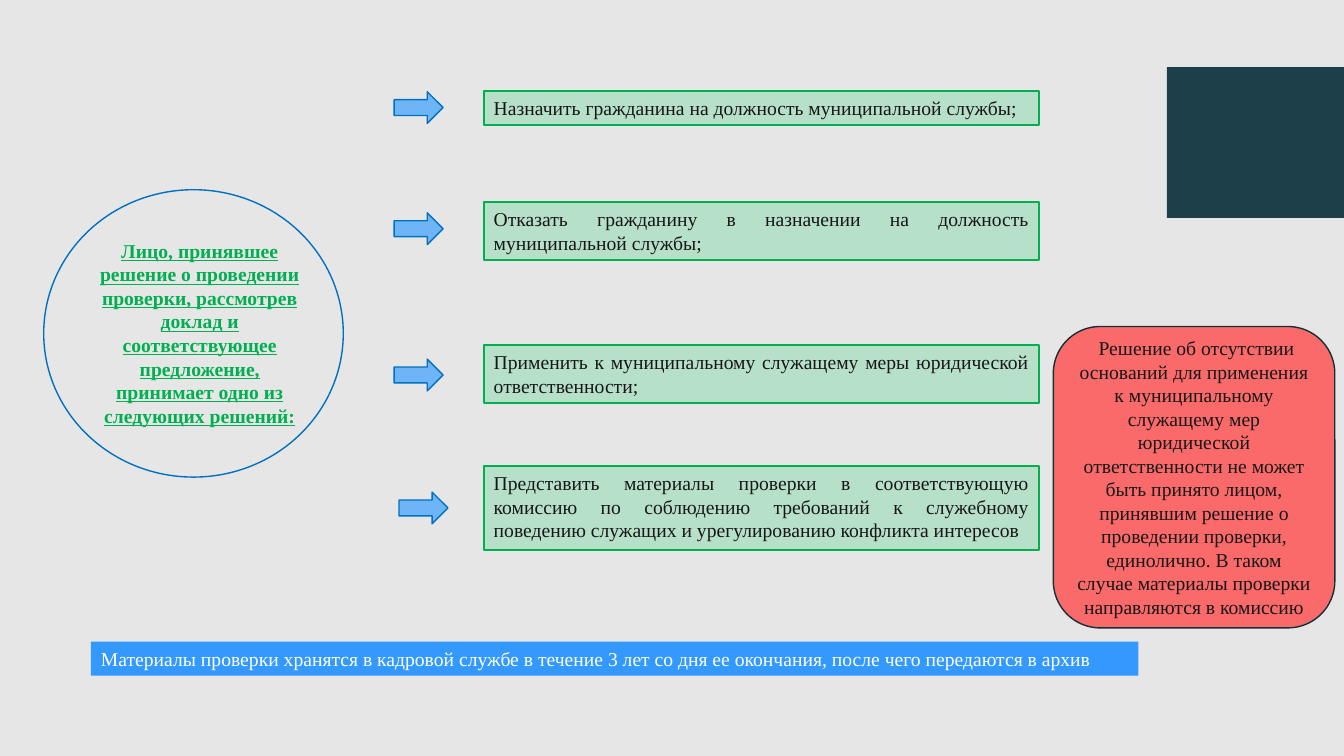
import pptx
import pptx.dml.color
import pptx.enum.shapes
import pptx.enum.text
import pptx.util

Pt = pptx.util.Pt
SHAPE = pptx.enum.shapes.MSO_SHAPE
ALIGN = pptx.enum.text.PP_ALIGN
ANCHOR = pptx.enum.text.MSO_ANCHOR
AUTO_SIZE = pptx.enum.text.MSO_AUTO_SIZE

WHITE, INK, GREEN, BLUE = "FFFFFF", "181717", "00B050", "0070C0"
SERIF, SANS = "Times New Roman", "Roboto"

# Arrow left, arrow top, box top, box height, text
DECISIONS = [
    (281.5, 65.5, 65, 24.3, "Назначить гражданина на должность муниципальной службы;"),
    (281.5, 152, 144.5, 41.3, "Отказать гражданину в назначении на должность муниципальной службы;"),
    (281.5, 256.5, 246.5, 41.3, "Применить к муниципальному служащему меры юридической ответственности;"),
    (285, 351.5, 333, 60, "Представить материалы проверки в соответствующую комиссию по соблюдению "
     "требований к служебному поведению служащих и урегулированию конфликта интересов"),
]


def color(value):
    return pptx.dml.color.RGBColor.from_string(value)


class Page:
    size = 14

    def __init__(self, deck, background):
        self.slide = deck.slides.add_slide(deck.slide_layouts[6])
        fill = self.slide.background.fill
        fill.solid()
        fill.fore_color.rgb = color(background)

    def shape(self, kind, left, top, width, height, fill=None, line=None, weight=1):
        shape = self.slide.shapes.add_shape(kind, Pt(left), Pt(top), Pt(width), Pt(height))
        shape.shadow.inherit = False
        if fill:
            shape.fill.solid()
            shape.fill.fore_color.rgb = color(fill)
        else:
            shape.fill.background()
        if line:
            shape.line.color.rgb = color(line)
            shape.line.width = Pt(weight)
        else:
            shape.line.fill.background()
        return shape

    def text_box(self, left, top, width, height):
        return self.slide.shapes.add_textbox(Pt(left), Pt(top), Pt(width), Pt(height))

    def paragraph(self, box, align, anchor=ANCHOR.TOP, grow=True):
        """Set up the text frame of the box and return its first paragraph."""
        frame = box.text_frame
        frame.word_wrap = True
        frame.vertical_anchor = anchor
        frame.auto_size = AUTO_SIZE.SHAPE_TO_FIT_TEXT if grow else AUTO_SIZE.NONE
        para = frame.paragraphs[0]
        para.alignment = align
        return para

    def span(self, para, text, ink=INK, font=SERIF, strong=None):
        """Add a run; a strong one is bold and underlined."""
        span = para.add_run()
        span.text = text
        span.font.name = font
        span.font.size = Pt(self.size)
        span.font.color.rgb = color(ink)
        span.font.bold = strong
        span.font.underline = strong


def main():
    deck = pptx.Presentation()
    deck.slide_width, deck.slide_height = Pt(960), Pt(540)
    page = Page(deck, "E7E6E6")

    page.shape(SHAPE.RECTANGLE, 833.5, 48, 126.5, 107.7, "1D3F4A")

    question = page.text_box(58.2, 167, 169, 143)
    page.span(
        page.paragraph(question, ALIGN.CENTER),
        "Лицо, принявшее решение о проведении проверки, рассмотрев доклад и "
        "соответствующее предложение, принимает одно из следующих решений:",
        GREEN, strong=True)
    page.shape(SHAPE.FLOWCHART_CONNECTOR, 31.2, 135.5, 214, 205.3, line=BLUE)

    for arrow_left, arrow_top, top, height, text in DECISIONS:
        box = page.shape(SHAPE.RECTANGLE, 345.6, top, 396.5, height, "B6E0C7", GREEN, 1.5)
        page.span(page.paragraph(box, ALIGN.JUSTIFY), text)
        page.shape(SHAPE.RIGHT_ARROW, arrow_left, arrow_top, 35, 22.7, "6DB5F7", BLUE)

    storage = page.shape(SHAPE.RECTANGLE, 65, 458.4, 748.2, 24.3, "3399FF")
    page.span(
        page.paragraph(storage, ALIGN.LEFT),
        "Материалы проверки хранятся в кадровой службе в течение 3 лет со дня ее "
        "окончания, после чего передаются в архив", WHITE)

    warning = page.shape(SHAPE.ROUNDED_RECTANGLE, 752.4, 233.2, 201.1, 215.3, "FA6A6A", "152F37")
    para = page.paragraph(warning, ALIGN.CENTER, ANCHOR.MIDDLE, grow=False)
    page.span(para, " ", WHITE, SANS)
    page.span(
        para,
        "Решение об отсутствии оснований для применения к муниципальному служащему мер "
        "юридической ответственности не может быть принято лицом, принявшим решение о "
        "проведении проверки, единолично. В таком случае материалы проверки "
        "направляются в комиссию")

    deck.save("out.pptx")


if __name__ == "__main__":
    main()
